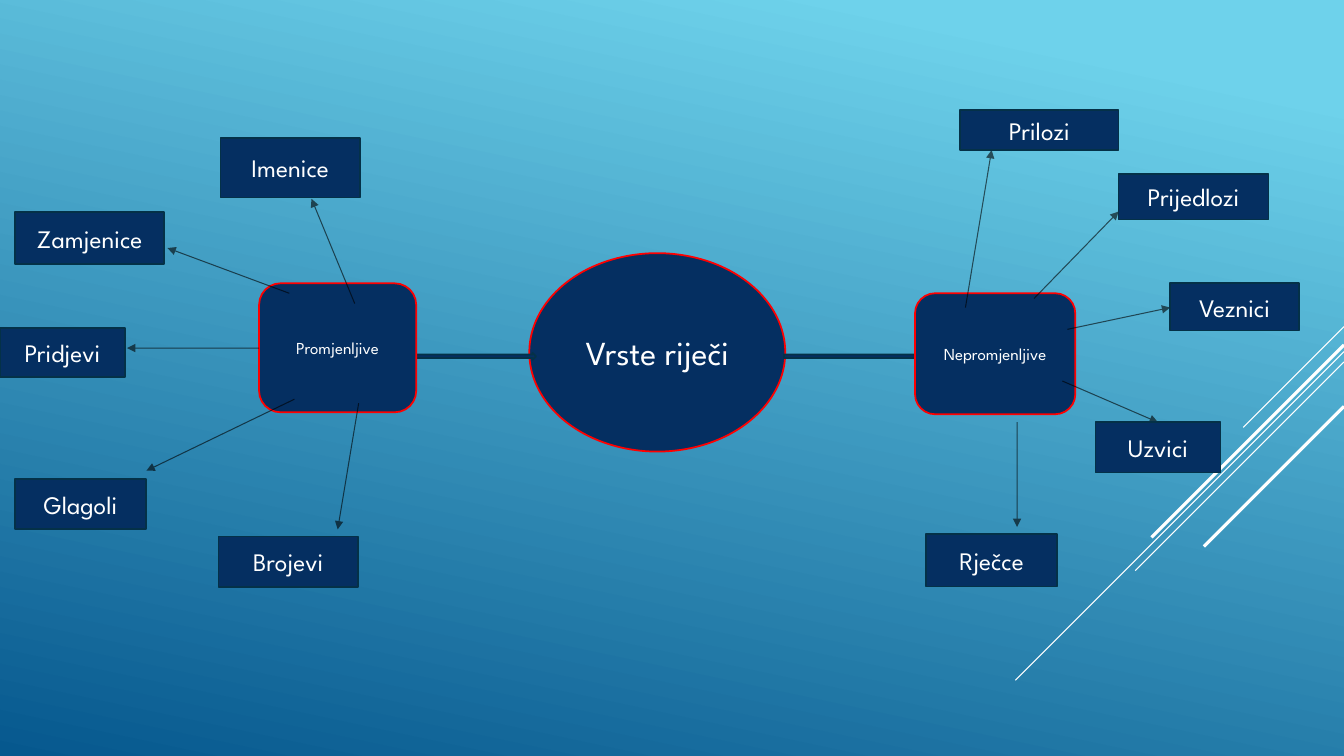
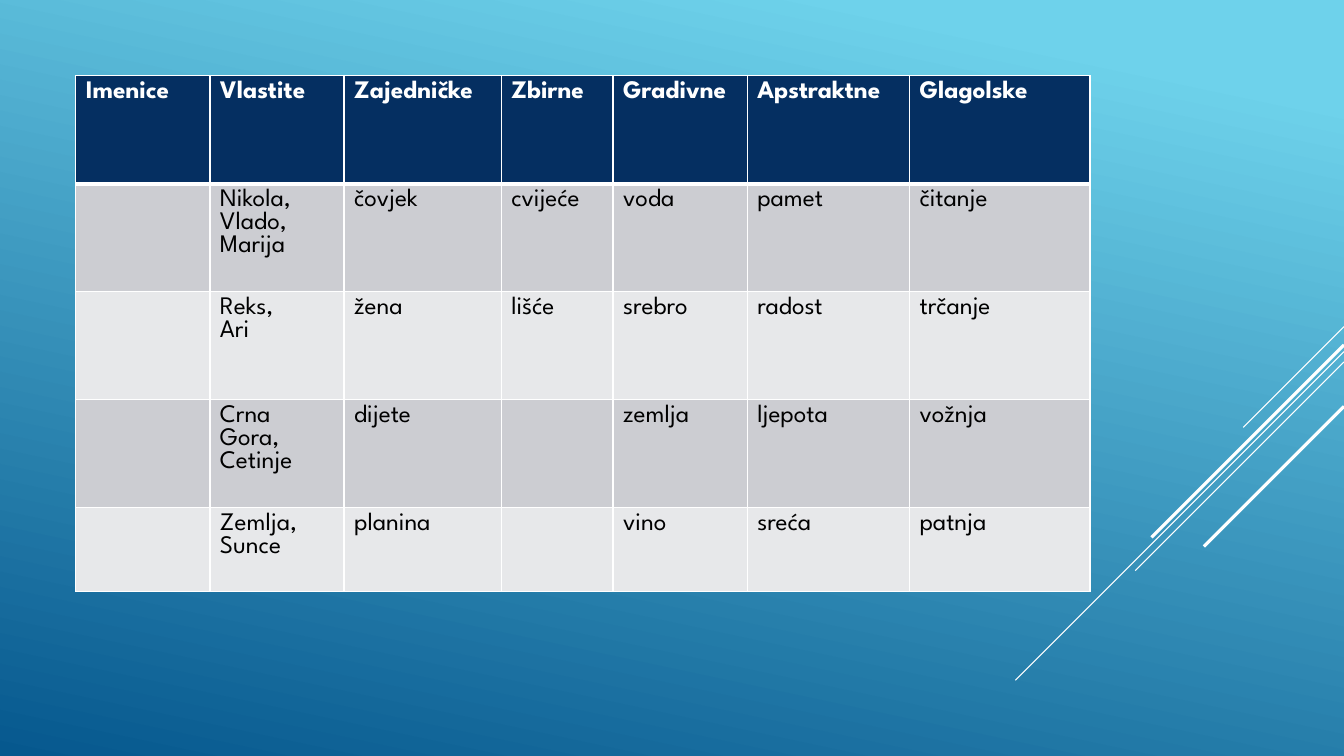
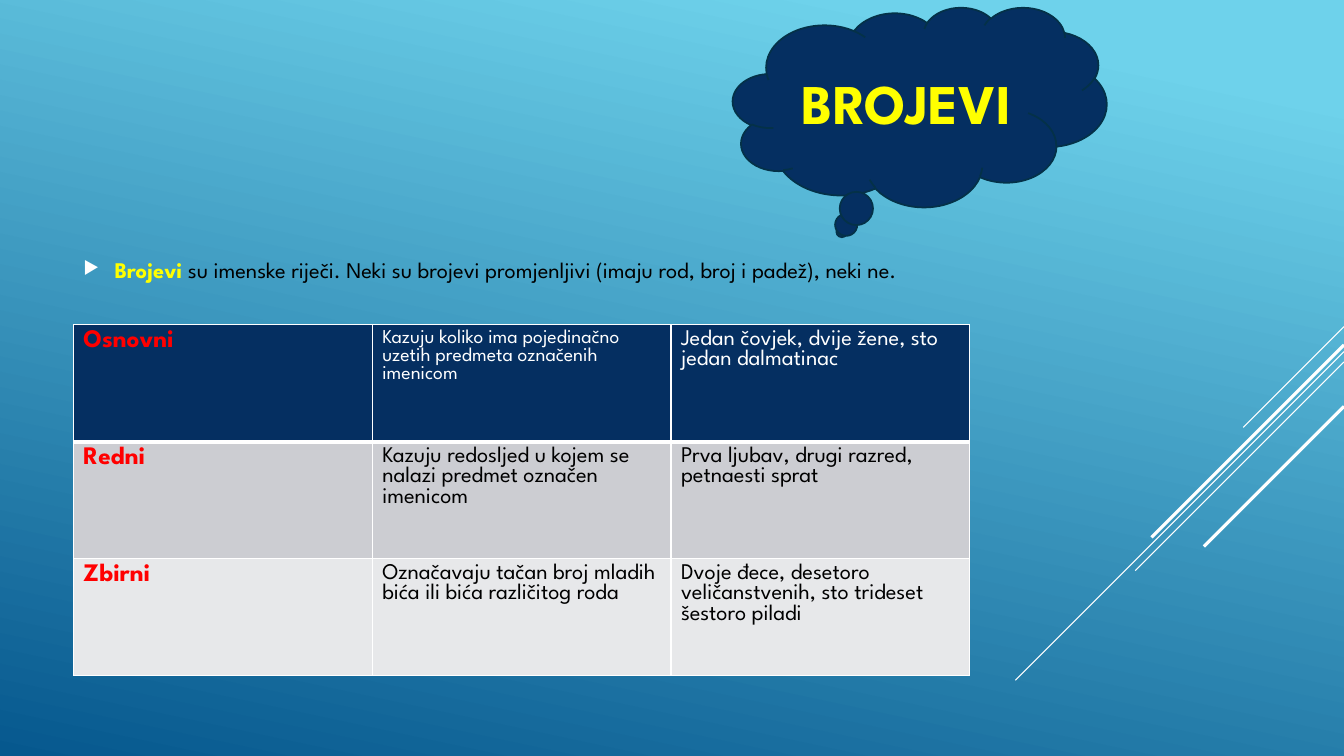
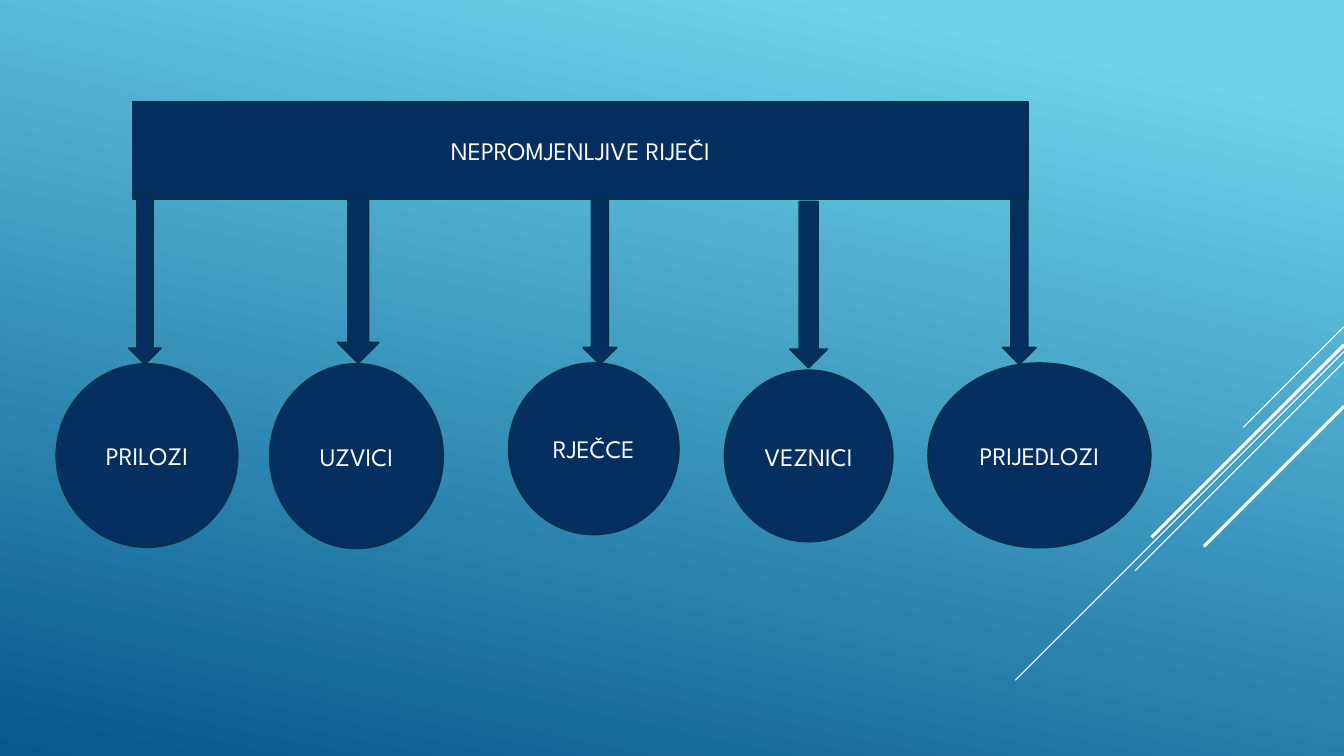
from lxml.etree import SubElement
from pptx import Presentation
from pptx.dml.color import RGBColor
from pptx.enum.shapes import MSO_CONNECTOR, MSO_SHAPE
from pptx.enum.text import MSO_ANCHOR, PP_ALIGN
from pptx.oxml import parse_xml
from pptx.oxml.ns import nsdecls, qn
from pptx.util import Cm, Pt

NAVY = RGBColor(0x05, 0x2F, 0x61)
EDGE = RGBColor(0x04, 0x31, 0x48)
SKY = RGBColor(0x6E, 0xD2, 0xEB)
DEEP = RGBColor(0x06, 0x58, 0x8E)
BAND_DARK = RGBColor(0xCC, 0xCD, 0xD2)
BAND_LIGHT = RGBColor(0xE7, 0xE8, 0xEA)
WHITE = RGBColor(0xFF, 0xFF, 0xFF)
BLACK = RGBColor(0, 0, 0)
RED = RGBColor(0xFF, 0, 0)
YELLOW = RGBColor(0xFF, 0xFF, 0)
FONT = "League Spartan"
WIDTH, HEIGHT = 33.87, 19.05
STRIPES = [(8.23, 2.54, 0.75), (8.86, 8.28, 0.75), (9.12, 5.26, 0.75),
           (8.69, 4.85, 2.25), (10.24, 3.53, 2.25)]

CHANGING = [
    ("Zamjenice", (-6.15, -1.8, 3.76, 1.32), (0.76, 0.25), (-2.31, -0.89)),
    ("Pridjevi", (-6.53, 1.12, 3.15, 1.24), (0, 1.63), (-3.33, 1.63)),
    ("Imenice", (-0.97, -3.66, 3.51, 1.5), (2.41, 0.51), (1.32, -2.13)),
    ("Glagoli", (-6.15, 4.93, 3.3, 1.27), (0.89, 2.92), (-2.84, 4.72)),
    ("Brojevi", (-1.02, 6.38, 3.51, 1.27), (2.51, 3.02), (1.98, 6.2)),
]
UNCHANGING = [
    ("Prilozi", (1.14, -4.62, 3.99, 1.02), (1.27, 0.36), (1.93, -3.61)),
    ("Prijedlozi", (5.13, -3, 3.78, 1.14), (3, 0.13), (5.13, -2.06)),
    ("Veznici", (6.43, -0.25, 3.25, 1.19), (3.84, 0.91), (6.43, 0.36)),
    ("Uzvici", (4.55, 3.25, 3.15, 1.27), (3.71, 2.21), (6.12, 3.25)),
    ("Rječce", (0.28, 6.07, 3.3, 1.32), (2.57, 3.25), (2.57, 5.89)),
]
NOUNS = [
    ["Imenice", "Vlastite", "Zajedničke", "Zbirne", "Gradivne", "Apstraktne", "Glagolske"],
    ["", "Nikola,\nVlado,\nMarija", "čovjek", "cvijeće", "voda", "pamet", "čitanje"],
    ["", "Reks,\nAri", "žena", "lišće", "srebro", "radost", "trčanje"],
    ["", "Crna Gora,\nCetinje", "dijete", "", "zemlja", "ljepota", "vožnja"],
    ["", "Zemlja,\nSunce", "planina", "", "vino", "sreća", "patnja"],
]
NUMBERS = [
    ["Osnovni", "Kazuju koliko ima pojedinačno uzetih predmeta označenih imenicom",
     "Jedan čovjek, dvije žene, sto jedan dalmatinac"],
    ["Redni", "Kazuju redosljed u kojem se nalazi predmet označen imenicom",
     "Prva ljubav, drugi razred, petnaesti sprat"],
    ["Zbirni", "Označavaju tačan broj mladih bića ili bića različitog roda",
     "Dvoje đece, desetoro veličanstvenih, sto trideset šestoro piladi"],
]
KINDS = [
    ("PRILOZI", (-0.1, 2.29, 0.81, 4.32), (-1.93, 6.6, 4.57, 4.62)),
    ("UZVICI", (5.16, 2.41, 1.04, 4.17), (3.45, 6.6, 4.37, 4.65)),
    ("RJEČCE", (11.35, 2.44, 0.84, 4.17), (9.47, 6.58, 4.29, 4.32)),
    ("VEZNICI", (16.56, 2.51, 0.94, 4.19), (14.91, 6.76, 4.24, 4.32)),
    ("PRIJEDLOZI", (21.92, 2.44, 0.84, 4.17), (20.04, 6.58, 5.61, 4.65)),
]


def shift(box, part):
    return (box[0] + part[0], box[1] + part[1], *part[2:])


def add_run(p, text, size, color=WHITE, bold=False):
    r = p.add_run()
    r.text = text
    r.font.name = FONT
    r.font.size = Pt(size)
    r.font.bold = bold
    r.font.color.rgb = color


def add_block(s, kind, box, text="", size=18, color=WHITE, edge=EDGE, bold=False):
    sp = s.shapes.add_shape(kind, *map(Cm, box))
    sp.shadow.inherit = False
    sp.fill.solid()
    sp.fill.fore_color.rgb = NAVY
    sp.line.color.rgb = edge
    sp.line.width = Pt(1.25)
    if text:
        tf = sp.text_frame
        tf.word_wrap = True
        tf.vertical_anchor = MSO_ANCHOR.MIDDLE
        tf.paragraphs[0].alignment = PP_ALIGN.CENTER
        add_run(tf.paragraphs[0], text, size, color, bold)


def add_line(s, start, end, color, width):
    line = s.shapes.add_connector(MSO_CONNECTOR.STRAIGHT, *map(Cm, (*start, *end)))
    line.line.color.rgb = color
    line.line.width = Pt(width)
    SubElement(line._element.spPr, qn("a:effectLst"))
    return line


def add_thin_arrow(s, start, end):
    ln = add_line(s, start, end, BLACK, 0.75).line._get_or_add_ln()
    SubElement(ln.find(".//" + qn("a:srgbClr")), qn("a:alpha"), val="60000")
    SubElement(ln, qn("a:tailEnd"), type="triangle")


def set_background(master):
    fill = master.background.fill
    fill.gradient()
    fill.gradient_angle = 258
    for stop, position, color in zip(fill.gradient_stops, (0.1, 1), (SKY, DEEP)):
        stop.position = position
        stop.color.rgb = color


def new_slide(prs):
    s = prs.slides.add_slide(prs.slide_layouts[6])
    for top, length, width in STRIPES:
        add_line(s, (WIDTH, top), (WIDTH - length, top + length), WHITE, width)
    return s


def add_borders(cell, top, bottom):
    tcPr = cell._tc.get_or_add_tcPr()
    for i, (side, width) in enumerate((("L", 1), ("R", 1), ("T", top), ("B", bottom))):
        tcPr.insert(i, parse_xml(
            f'<a:ln{side} {nsdecls("a")} w="{Pt(width)}"><a:solidFill>'
            f'<a:srgbClr val="{WHITE}"/></a:solidFill></a:ln{side}>'))


def add_grid(s, left, top, widths, heights, rows, style):
    frame = s.shapes.add_table(len(heights), len(widths), Cm(left), Cm(top),
                               Cm(sum(widths)), Cm(sum(heights)))
    table = frame.table
    table.horz_banding = False
    for column, width in zip(table.columns, widths):
        column.width = Cm(width)
    for i, (row, height) in enumerate(zip(table.rows, heights)):
        row.height = Cm(height)
        for j, (cell, text) in enumerate(zip(row.cells, rows[i])):
            cell.fill.solid()
            cell.fill.fore_color.rgb = NAVY if i == 0 else BAND_DARK if i % 2 else BAND_LIGHT
            add_borders(cell, 3 if i == 1 else 1, 3 if i == 0 else 1)
            tf = cell.text_frame
            for k, part in enumerate(text.split("\n") if text else []):
                p = tf.add_paragraph() if k else tf.paragraphs[0]
                add_run(p, part, *style(i, j))


def noun_style(i, j):
    return (18, WHITE, True) if i == 0 else (18, BLACK, False)


def number_style(i, j):
    if j == 0:
        return 18, RED, True
    return 14 if (i, j) == (0, 1) else 16, WHITE if i == 0 else BLACK, False


def add_branch(s, hub, title, words):
    add_block(s, MSO_SHAPE.ROUNDED_RECTANGLE, hub, title, 12, edge=RED)
    for word, box, start, end in words:
        add_thin_arrow(s, shift(hub, start), shift(hub, end))
        add_block(s, MSO_SHAPE.RECTANGLE, shift(hub, box), word)


def word_map_slide(prs):
    s = new_slide(prs)
    centre = (13.34, 6.38, 6.45, 5)
    add_block(s, MSO_SHAPE.OVAL, centre, "Vrste riječi", 24, edge=RED)
    for link in ((6.42, 2.51, 4.52, 0.18), (-3.94, 2.51, 4.11, 0.18)):
        add_block(s, MSO_SHAPE.RIGHT_ARROW, shift(centre, link))
    add_branch(s, (23.06, 7.39, 4.04, 3.05), "Nepromjenljive", UNCHANGING)
    add_branch(s, (6.53, 7.14, 3.96, 3.25), "Promjenljive", CHANGING)


def nouns_slide(prs):
    s = new_slide(prs)
    add_grid(s, 1.91, 1.91, [3.38, 3.38, 3.96, 2.82, 3.38, 4.09, 4.55],
             [2.72] * 4 + [2.11], NOUNS, noun_style)


def add_bullet_text(s, box):
    tf = s.shapes.add_textbox(*map(Cm, box)).text_frame
    tf.word_wrap = True
    tf.vertical_anchor = MSO_ANCHOR.MIDDLE
    p = tf.paragraphs[0]
    pPr = p._p.get_or_add_pPr()
    pPr.set("marL", str(Cm(0.79)))
    pPr.set("indent", str(Cm(-0.79)))
    SubElement(SubElement(pPr, qn("a:buClr")), qn("a:srgbClr"), val=str(WHITE))
    SubElement(pPr, qn("a:buSzPct"), val="80000")
    SubElement(pPr, qn("a:buChar"), char="▶")
    add_run(p, "Brojevi", 16, YELLOW, True)
    add_run(p, " su imenske riječi. Neki su brojevi promjenljivi "
               "(imaju rod, broj i padež), neki ne.", 16, BLACK)


def numbers_slide(prs):
    s = new_slide(prs)
    add_bullet_text(s, (1.85, 6.25, 23.7, 1.1))
    add_block(s, MSO_SHAPE.CLOUD_CALLOUT, (18.47, 0.18, 9.42, 5.03),
              "BROJEVI", 40, YELLOW, bold=True)
    add_grid(s, 1.85, 8.18, [7.53] * 3, [2.95] * 3, NUMBERS, number_style)


def unchanging_slide(prs):
    s = new_slide(prs)
    banner = (3.35, 2.57, 22.56, 2.44)
    add_block(s, MSO_SHAPE.RECTANGLE, banner, "NEPROMJENLJIVE RIJEČI")
    for word, arrow, circle in KINDS:
        add_block(s, MSO_SHAPE.DOWN_ARROW, shift(banner, arrow))
        add_block(s, MSO_SHAPE.OVAL, shift(banner, circle), word)


def main():
    prs = Presentation()
    prs.slide_width, prs.slide_height = Cm(WIDTH), Cm(HEIGHT)
    set_background(prs.slide_master)
    word_map_slide(prs)
    nouns_slide(prs)
    numbers_slide(prs)
    unchanging_slide(prs)
    prs.save("out.pptx")


if __name__ == "__main__":
    main()
